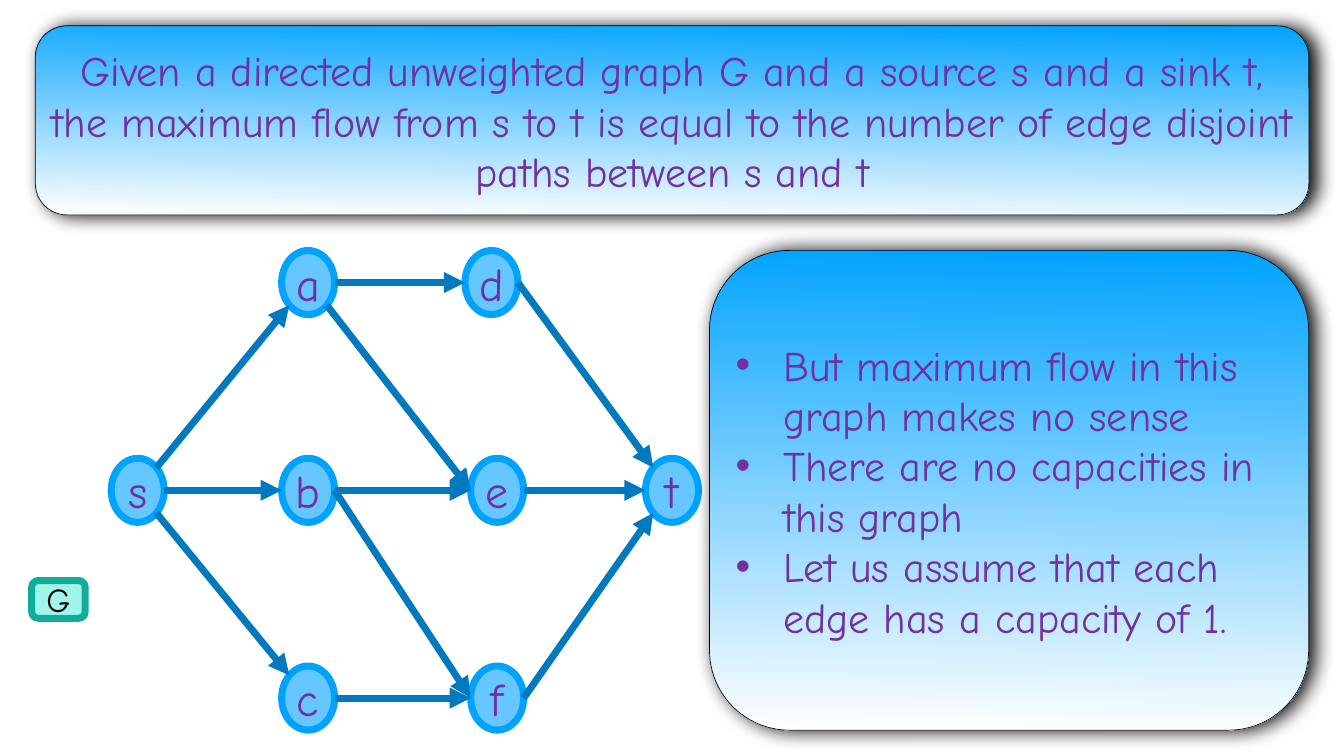
from math import cos, radians, sin

from lxml.etree import SubElement
from pptx import Presentation
from pptx.dml.color import RGBColor
from pptx.enum.shapes import MSO_CONNECTOR, MSO_SHAPE as Shape
from pptx.enum.text import MSO_ANCHOR as Anchor, PP_ALIGN as Align
from pptx.oxml.ns import qn
from pptx.util import Cm, Pt

BLUE = RGBColor(0x00, 0xA2, 0xFF)
LIGHT_BLUE = RGBColor(0x66, 0xC7, 0xFF)
EDGE_BLUE = RGBColor(0x00, 0x79, 0xBF)
TEAL = RGBColor(0x10, 0xAD, 0x9B)
MINT = RGBColor(0xA1, 0xF6, 0xEC)
PURPLE = RGBColor(0x70, 0x30, 0xA0)
BLACK = RGBColor(0, 0, 0)
WHITE = RGBColor(0xFF, 0xFF, 0xFF)

NODE_WIDTH, NODE_HEIGHT = 2.67, 3.23
TOP, MIDDLE, BOTTOM = 14.24, 24.71, 35.18
NODES = {
    "a": (15.53, TOP), "d": (24.77, TOP),
    "s": (6.94, MIDDLE), "b": (15.53, MIDDLE),
    "e": (25.06, MIDDLE), "t": (33.87, MIDDLE),
    "c": (15.53, BOTTOM), "f": (25.06, BOTTOM),
}
RIGHT, LOWER_RIGHT, LOWER_LEFT, LEFT, UPPER_LEFT, UPPER_RIGHT = 0, 45, 135, 180, 225, 315
EDGES = [
    ("a", RIGHT, "d", LEFT), ("a", LOWER_RIGHT, "e", LEFT),
    ("b", RIGHT, "e", LEFT), ("b", RIGHT, "f", LEFT), ("c", RIGHT, "f", LEFT),
    ("s", UPPER_RIGHT, "a", LOWER_LEFT), ("s", RIGHT, "b", LEFT),
    ("s", LOWER_RIGHT, "c", UPPER_LEFT),
    ("d", RIGHT, "t", UPPER_LEFT), ("e", RIGHT, "t", LEFT),
    ("f", RIGHT, "t", LOWER_LEFT),
]
THEOREM = ("Given a directed unweighted graph G and a source s and a sink t, "
           "the maximum flow from s to t is equal to the number of edge disjoint "
           "paths between s and t")
REMARKS = [
    "But maximum flow in this graph makes no sense",
    "There are no capacities in this graph",
    "Let us assume that each edge has a capacity of 1.",
]


def write_text(shape, *lines, size=60, color=PURPLE, align=Align.CENTER, bullet_indent=None):
    frame = shape.text_frame
    frame.word_wrap = True
    frame.vertical_anchor = Anchor.MIDDLE
    frame.margin_left = frame.margin_right = Cm(0.14)
    frame.margin_top = frame.margin_bottom = Cm(0.14)
    for index, line in enumerate(lines):
        paragraph = frame.add_paragraph() if index else frame.paragraphs[0]
        paragraph.alignment = align
        run = paragraph.add_run()
        run.text = line
        run.font.name = "Comic Neue"
        run.font.size = Pt(size)
        run.font.color.rgb = color
        if bullet_indent:
            properties = paragraph._p.get_or_add_pPr()
            properties.set("marL", str(Cm(bullet_indent)))
            properties.set("indent", str(-Cm(bullet_indent)))
            SubElement(properties, qn("a:buFont"), typeface="Arial")
            SubElement(properties, qn("a:buChar"), char="•")


class GraphSlide:
    """Style and drawing methods for a slide with a directed graph."""

    def __init__(self, slide, stroke=10):
        self.slide = slide
        self.stroke = Pt(stroke)

    def box(self, kind, left, top, width, height, line, fill=None):
        shape = self.slide.shapes.add_shape(kind, Cm(left), Cm(top), Cm(width), Cm(height))
        shape.shadow.inherit = False
        shape.line.color.rgb = line
        shape.line.width = self.stroke
        if fill is not None:
            shape.fill.solid()
            shape.fill.fore_color.rgb = fill
        return shape

    def panel(self, left, top, width, height):
        shape = self.box(Shape.ROUNDED_RECTANGLE, left, top, width, height, BLACK)
        shape.line.width = Pt(1)
        shape.fill.gradient()
        shape.fill.gradient_angle = 269
        for stop, color in zip(shape.fill.gradient_stops, (BLUE, WHITE)):
            stop.color.rgb = color
        effects = shape._element.spPr.find(qn("a:effectLst"))
        shadow = SubElement(effects, qn("a:outerShdw"), blurRad=str(Pt(28)),
                            dist=str(Pt(9)), dir="0", algn="ctr", rotWithShape="0")
        color = SubElement(shadow, qn("a:srgbClr"), val=str(BLACK))
        SubElement(color, qn("a:alpha"), val="97000")
        return shape

    def node(self, name):
        x, y = NODES[name]
        shape = self.box(Shape.OVAL, x - NODE_WIDTH / 2, y - NODE_HEIGHT / 2,
                         NODE_WIDTH, NODE_HEIGHT, BLUE, LIGHT_BLUE)
        write_text(shape, name, size=66)

    def rim_point(self, name, angle):
        x, y = NODES[name]
        return (Cm(x + NODE_WIDTH / 2 * cos(radians(angle))),
                Cm(y + NODE_HEIGHT / 2 * sin(radians(angle))))

    def edge(self, source, source_angle, target, target_angle):
        connector = self.slide.shapes.add_connector(
            MSO_CONNECTOR.STRAIGHT,
            *self.rim_point(source, source_angle), *self.rim_point(target, target_angle))
        connector.line.color.rgb = EDGE_BLUE
        connector.line.width = self.stroke
        SubElement(connector.line._get_or_add_ln(), qn("a:tailEnd"), type="triangle")
        SubElement(connector._element.spPr, qn("a:effectLst"))


def main():
    presentation = Presentation()
    presentation.slide_width, presentation.slide_height = Cm(67.74), Cm(38.1)
    graph = GraphSlide(presentation.slides.add_slide(presentation.slide_layouts[6]))

    write_text(graph.panel(1.78, 1.3, 64.19, 9.53), THEOREM)
    for name in NODES:
        graph.node(name)
    for edge in EDGES:
        graph.edge(*edge)
    label = graph.box(Shape.ROUNDED_RECTANGLE, 1.6, 29.26, 2.69, 1.9, TEAL, MINT)
    write_text(label, "G", size=48, color=BLACK)
    write_text(graph.panel(35.76, 12.62, 30.2, 24.18), *REMARKS,
               align=Align.LEFT, bullet_indent=2.39)

    presentation.save("out.pptx")


if __name__ == "__main__":
    main()
